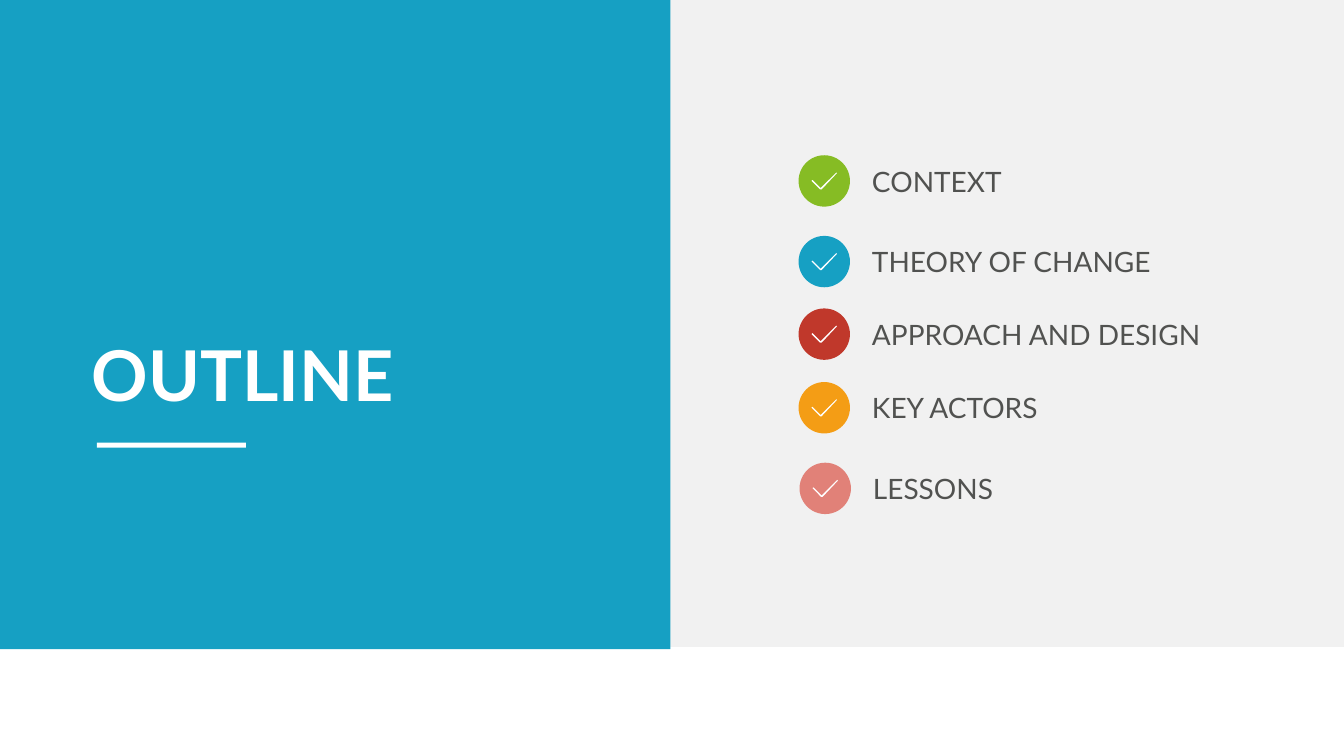
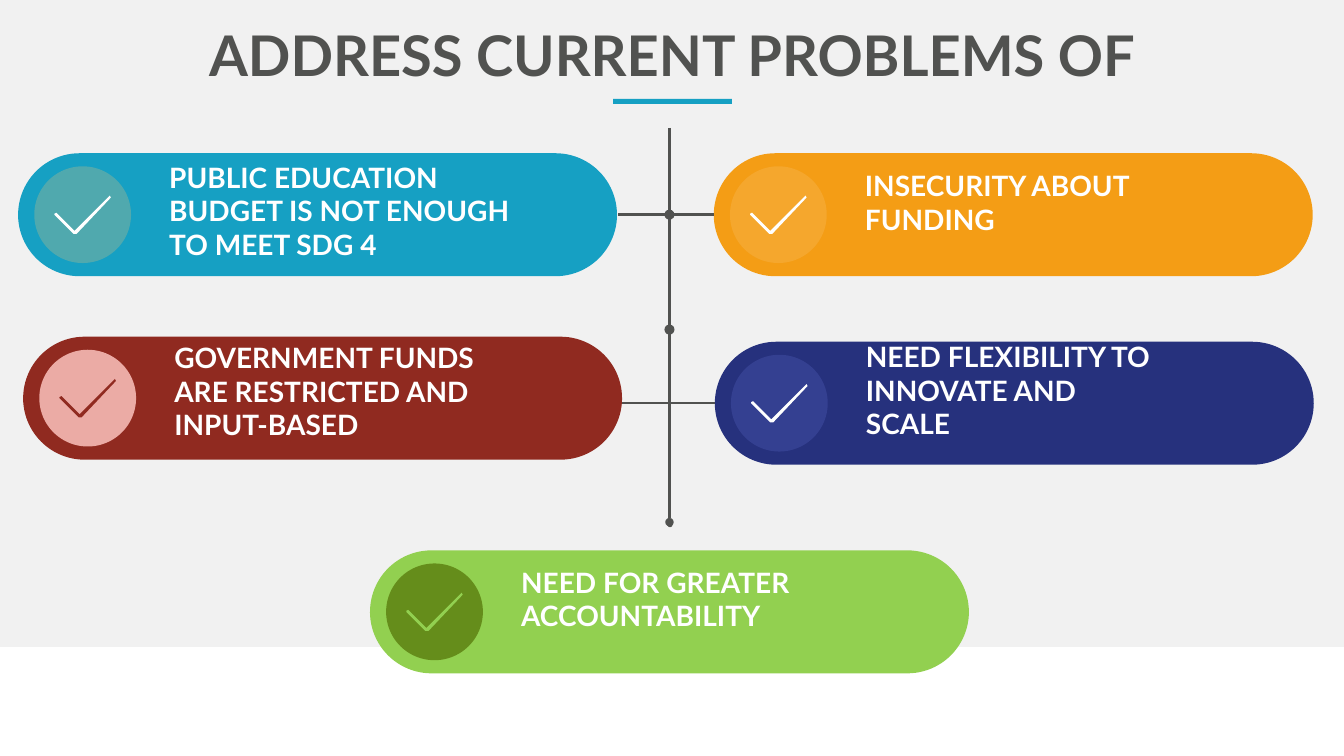
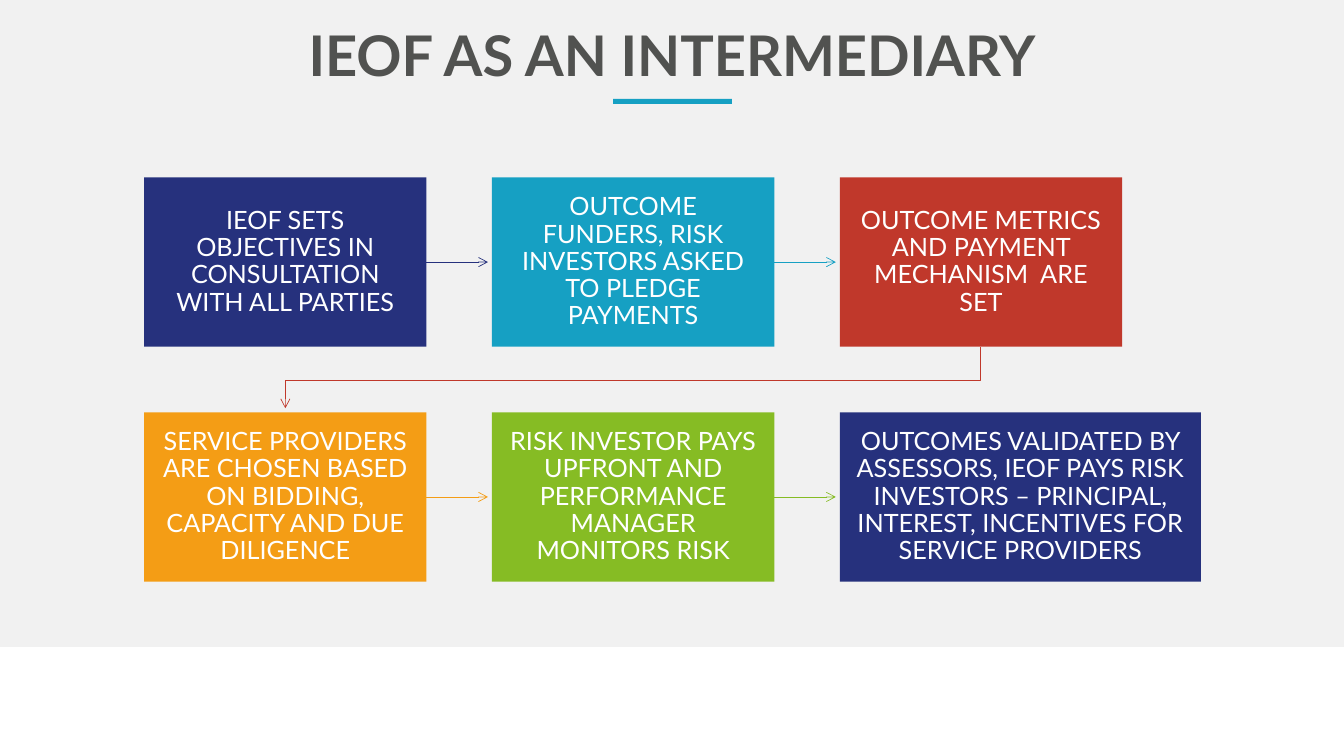
from pptx import Presentation
from pptx.dml.color import RGBColor
from pptx.enum.shapes import MSO_CONNECTOR, MSO_SHAPE
from pptx.enum.text import MSO_ANCHOR, PP_ALIGN
from pptx.oxml.ns import qn
from pptx.util import Pt
from lxml import etree

PX = 9144  # 100 px to the inch
RECT, OVAL, PILL = MSO_SHAPE.RECTANGLE, MSO_SHAPE.OVAL, MSO_SHAPE.ROUNDED_RECTANGLE
WIRE = MSO_CONNECTOR.STRAIGHT
LEFT, MID = PP_ALIGN.LEFT, PP_ALIGN.CENTER
TOP, MIDDLE, BOTTOM = MSO_ANCHOR.TOP, MSO_ANCHOR.MIDDLE, MSO_ANCHOR.BOTTOM

WHITE = RGBColor(0xFF, 0xFF, 0xFF)
PAPER = RGBColor(0xF1, 0xF1, 0xF1)
GREY = RGBColor(0x51, 0x52, 0x50)
BLUE = RGBColor(0x16, 0xA0, 0xC3)
NAVY = RGBColor(0x26, 0x31, 0x7D)
IRIS = RGBColor(0x5F, 0x6D, 0xCE)
RED = RGBColor(0xC0, 0x38, 0x2B)
WINE = RGBColor(0x90, 0x2A, 0x20)
ROSE = RGBColor(0xE1, 0x81, 0x78)
PINK = RGBColor(0xEB, 0xAB, 0xA5)
AMBER = RGBColor(0xF4, 0x9D, 0x15)
SAND = RGBColor(0xF8, 0xC4, 0x73)
GREEN = RGBColor(0x86, 0xBC, 0x24)
LIME = RGBColor(0x92, 0xD0, 0x50)
MOSS = RGBColor(0x65, 0x8D, 0x1B)

# Text formats
HEAD = {"name": "Lato", "size": Pt(40), "bold": True}
COVER = {"name": "Lato", "size": Pt(50), "bold": True}
ITEM = {"name": "Lato", "size": Pt(20), "bold": False}
LABEL = {"name": "Lato", "size": Pt(20), "bold": True}
STEP = {"name": "Lato", "size": Pt(18), "bold": False}


def draw(slide, kind, x, y, w, h, fill):
    shape = slide.shapes.add_shape(kind, x * PX, y * PX, w * PX, h * PX)
    shape.shadow.inherit = False
    shape.fill.solid()
    shape.fill.fore_color.rgb = fill
    shape.line.fill.background()
    return shape


def write(shape, text, style, color, anchor=MIDDLE, align=LEFT, space=1.0):
    frame = shape.text_frame
    frame.word_wrap = True
    frame.vertical_anchor = anchor
    para = frame.paragraphs[0]
    para.alignment, para.line_spacing = align, space
    run = para.add_run()
    run.text = text
    for key, value in style.items():
        setattr(run.font, key, value)
    run.font.color.rgb = color
    return frame


deck = Presentation()
deck.slide_width, deck.slide_height = 1333 * PX, 750 * PX
ground = deck.slide_master.background.fill
ground.solid()
ground.fore_color.rgb = PAPER

# Shared footer band, title and title rule
pages = []
for title in ("", "ADDRESS CURRENT PROBLEMS OF", "IEOF AS AN INTERMEDIARY"):
    page = deck.slides.add_slide(deck.slide_layouts[6])
    draw(page, RECT, 0, 642, 1333, 108, WHITE)
    if title:
        area = page.shapes.add_textbox(0, 23 * PX, 1333 * PX, 98 * PX)
        write(area, title, HEAD, GREY, TOP, MID, 0.9)
        draw(page, RECT, 608, 98, 118, 5, BLUE)
    pages.append(page)
first, second, third = pages
marks = []  # slide, x, y, size, fill, opacity, tick width, tick colour
wires = []  # slide, x1, y1, x2, y2, colour, points, end

# Outline: panel and list
draw(first, RECT, 0, 0, 665, 644, BLUE)
area = first.shapes.add_textbox(81 * PX, 77 * PX, 548 * PX, 340 * PX)
write(area, "OUTLINE", COVER, WHITE, BOTTOM)
draw(first, RECT, 96, 439, 148, 5, WHITE)
for text, x, y, fill in (
    ("CONTEXT", 792, 154, GREEN),
    ("THEORY OF CHANGE", 792, 234, BLUE),
    ("APPROACH AND DESIGN", 792, 306, RED),
    ("KEY ACTORS", 792, 379, AMBER),
    ("LESSONS", 793, 459, ROSE),
):
    area = first.shapes.add_textbox((x + 63) * PX, (y + 7) * PX, 438 * PX, 37 * PX)
    write(area, text, ITEM, GREY)
    marks.append((first, x, y, 51, fill, 100, 25, WHITE))

# Problems: spine with dots and branches
for x, y, size in ((659, 208, 10), (659, 322, 10), (662, 518, 5)):
    draw(second, OVAL, x, y, size, size, GREY)
wires += [
    (second, 664, 127, 664, 518, GREY, 2, "oval"),
    (second, 613, 213, 708, 213, GREY, 1.75, "none"),
    (second, 617, 400, 709, 400, GREY, 1.75, "none"),
]

# Problems: pills
for text, x, y, drop, wide, fill, disc, alpha, tick in (
    ("INSECURITY ABOUT FUNDING", 708, 152, 17, 345, AMBER, SAND, 26, WHITE),
    ("NEED FLEXIBILITY TO INNOVATE AND SCALE", 709, 339, 16, 313, NAVY, IRIS, 26, WHITE),
    ("PUBLIC EDUCATION BUDGET IS NOT ENOUGH TO MEET SDG 4", 18, 152, 25, 367,
     BLUE, SAND, 26, WHITE),
    ("GOVERNMENT FUNDS ARE RESTRICTED AND INPUT-BASED", 23, 334, 22, 349,
     WINE, PINK, 100, WINE),
    ("NEED FOR GREATER ACCOUNTABILITY", 367, 546, 16, 313, LIME, MOSS, 100, LIME),
):
    draw(second, PILL, x, y, 594, 122, fill).adjustments[0] = 0.5
    area = second.shapes.add_textbox((x + 140) * PX, (y + drop) * PX, wide * PX, 64 * PX)
    write(area, text, LABEL, WHITE)
    marks.append((second, x + 16, y + 13, 96, disc, alpha, 56, tick))

# Intermediary: steps in two rows of three
steps = (
    ("IEOF SETS OBJECTIVES IN CONSULTATION WITH ALL PARTIES", NAVY, 280),
    ("OUTCOME FUNDERS, RISK INVESTORS ASKED TO PLEDGE PAYMENTS", BLUE, 280),
    ("OUTCOME METRICS AND PAYMENT MECHANISM  ARE SET", RED, 280),
    ("SERVICE PROVIDERS ARE CHOSEN BASED ON BIDDING, CAPACITY AND DUE DILIGENCE", AMBER, 280),
    ("RISK INVESTOR PAYS UPFRONT AND PERFORMANCE MANAGER MONITORS RISK", GREEN, 280),
    ("OUTCOMES VALIDATED BY ASSESSORS, IEOF PAYS RISK INVESTORS – PRINCIPAL, "
     "INTEREST, INCENTIVES FOR SERVICE PROVIDERS", NAVY, 358),
)
for i, (text, fill, wide) in enumerate(steps):
    row, col = divmod(i, 3)
    x, y = 143 + 345 * col, 176 + 233 * row
    frame = write(draw(third, RECT, x, y, wide, 168, fill), text, STEP, WHITE, MIDDLE, MID, 0.9)
    for side in ("left", "right", "top", "bottom"):
        setattr(frame, "margin_" + side, 14 * PX)
    if col < 2:
        wires.append((third, x + 280, y + 84, x + 341, y + 84, fill, 0.5, "arrow"))

# Intermediary: bent arrow from the first row to the second
pen = third.shapes.build_freeform(972, 344, PX)
pen.add_line_segments([(972, 377), (283, 377), (283, 405)], close=False)
bend = pen.convert_to_shape()
bend.shadow.inherit = False
bend.fill.background()
bend.line.color.rgb = RED
bend.line.width = Pt(0.5)
ends = [(bend, "arrow")]

# Straight lines, then line ends
for slide, x1, y1, x2, y2, color, points, end in wires:
    wire = slide.shapes.add_connector(WIRE, x1 * PX, y1 * PX, x2 * PX, y2 * PX)
    wire.line.color.rgb = color
    wire.line.width = Pt(points)
    etree.SubElement(wire._element.spPr, qn("a:effectLst"))
    ends.append((wire, end))
for wire, end in ends:
    etree.SubElement(wire.line._get_or_add_ln(), qn("a:tailEnd"), type=end)

# Discs with a centred tick, outlined on a 56 by 38 grid
TICK = [(56, 2), (22, 38), (19, 38), (0, 19), (0, 18), (2, 17), (20, 35), (54, 1)]
for slide, x, y, size, fill, alpha, wide, color in marks:
    disc = draw(slide, OVAL, x, y, size, size, fill)
    if alpha < 100:
        tint = disc._element.spPr.find(qn("a:solidFill"))[0]
        etree.SubElement(tint, qn("a:alpha"), val=str(alpha * 1000))
    unit = PX * wide / 56
    pen = slide.shapes.build_freeform(55, 0, unit)
    pen.add_line_segments(TICK)
    tick = pen.convert_to_shape(
        int((x + size / 2) * PX - 28 * unit), int((y + size / 2) * PX - 19 * unit))
    tick.shadow.inherit = False
    tick.fill.solid()
    tick.fill.fore_color.rgb = color
    tick.line.fill.background()

deck.save("out.pptx")
